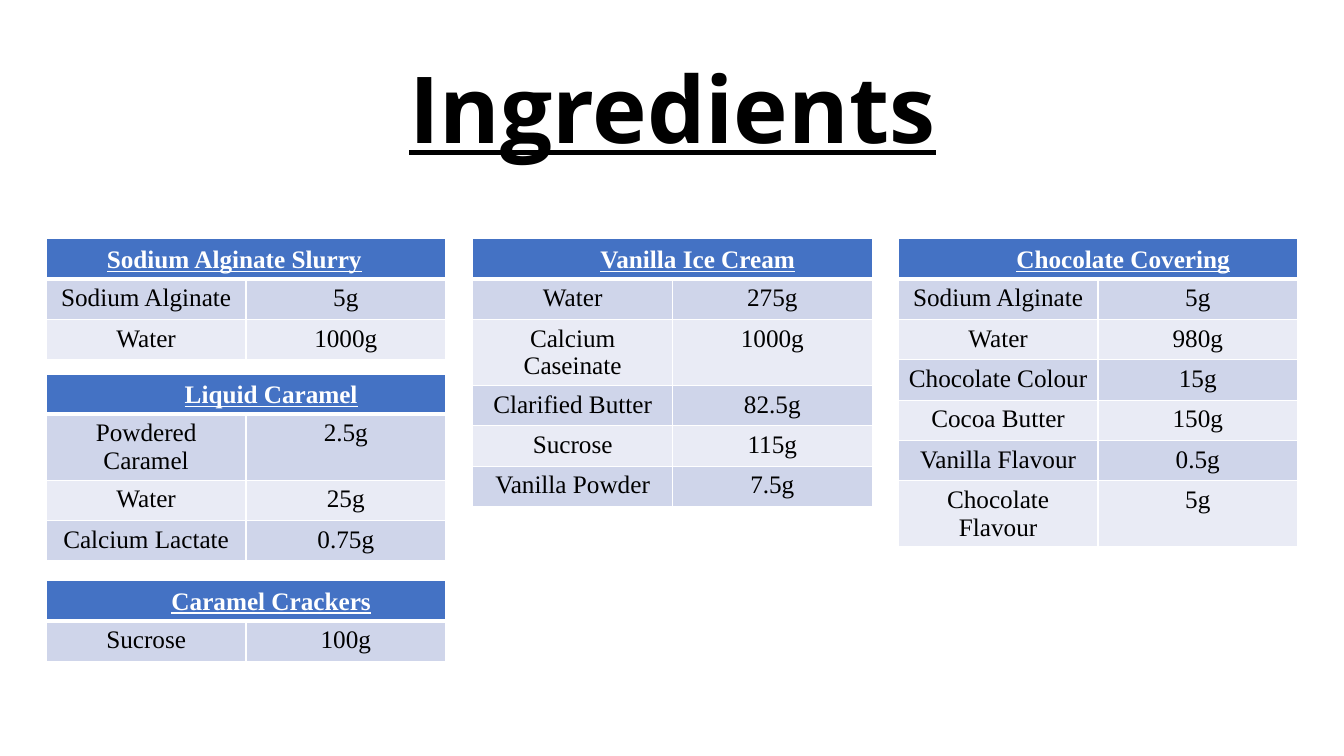
from lxml.etree import SubElement
from pptx import Presentation
from pptx.dml.color import RGBColor
from pptx.enum.text import MSO_ANCHOR, PP_ALIGN
from pptx.oxml.ns import qn
from pptx.util import Inches, Pt

COLUMN_LEFTS = [0.46, 4.69, 8.91]
TABLE_TOP = 2.37
TABLE_WIDTH = 3.96
ROW_HEIGHT = 0.4
HEADER_FILL = "4472C4"
BAND_FILLS = ["CFD5EA", "E9EBF5"]
WHITE = "FFFFFF"
BLACK = "000000"

RECIPES = [
    (0, TABLE_TOP, PP_ALIGN.LEFT, "Sodium Alginate Slurry",
     [("Sodium Alginate", "5g"), ("Water", "1000g")]),
    (0, 3.71, PP_ALIGN.CENTER, "Liquid Caramel",
     [("Powdered Caramel", "2.5g"), ("Water", "25g"), ("Calcium Lactate", "0.75g")]),
    (0, 5.76, PP_ALIGN.CENTER, "Caramel Crackers",
     [("Sucrose", "100g")]),
    (1, TABLE_TOP, PP_ALIGN.CENTER, "Vanilla Ice Cream",
     [("Water", "275g"), ("Calcium Caseinate", "1000g"), ("Clarified Butter", "82.5g"),
      ("Sucrose", "115g"), ("Vanilla Powder", "7.5g")]),
    (2, TABLE_TOP, PP_ALIGN.CENTER, "Chocolate Covering",
     [("Sodium Alginate", "5g"), ("Water", "980g"), ("Chocolate Colour", "15g"),
      ("Cocoa Butter", "150g"), ("Vanilla Flavour", "0.5g"), ("Chocolate Flavour", "5g")]),
]


def color(value):
    return RGBColor.from_string(value)


def format_paragraph(paragraph, font_name, size, font_color, heading, alignment):
    paragraph.alignment = alignment
    for run in paragraph.runs:
        font = run.font
        font.name = font_name
        font.size = Pt(size)
        font.color.rgb = color(font_color)
        font.bold = heading
        font.underline = heading


def add_borders(cell, top, bottom):
    properties = cell._tc.get_or_add_tcPr()
    for side, width in (("L", 1), ("R", 1), ("T", top), ("B", bottom)):
        line = SubElement(properties, qn(f"a:ln{side}"), w=str(Pt(width)))
        fill = SubElement(line, qn("a:solidFill"))
        SubElement(fill, qn("a:srgbClr"), val=WHITE)


def fill_cell(cell, text, fill, font_color, heading, alignment, top=1, bottom=1):
    add_borders(cell, top, bottom)
    cell.fill.solid()
    cell.fill.fore_color.rgb = color(fill)
    cell.text_frame.text = text
    paragraph = cell.text_frame.paragraphs[0]
    format_paragraph(paragraph, "Times New Roman", 18, font_color, heading, alignment)
    return paragraph


def add_recipe(slide, column, top, alignment, name, ingredients):
    row_count = len(ingredients) + 1
    table = slide.shapes.add_table(
        row_count, 2, Inches(COLUMN_LEFTS[column]), Inches(top),
        Inches(TABLE_WIDTH), Inches(ROW_HEIGHT * row_count)).table
    header = table.cell(0, 0)
    header.merge(table.cell(0, 1))
    paragraph = fill_cell(header, name, HEADER_FILL, WHITE, True, alignment, bottom=3)
    paragraph.line_spacing = 1.07
    paragraph.space_after = Pt(8)
    properties = paragraph._p.get_or_add_pPr()
    properties.set("marL", str(Inches(0.5)))
    properties.set("indent", "0")
    for row, ingredient in enumerate(ingredients, start=1):
        for index, text in enumerate(ingredient):
            fill_cell(table.cell(row, index), text, BAND_FILLS[(row - 1) % 2], BLACK,
                      False, PP_ALIGN.CENTER, top=3 if row == 1 else 1)


def add_title(slide, text):
    title = slide.shapes.title
    title.left, title.top = Inches(0.92), Inches(0.4)
    title.width, title.height = Inches(11.5), Inches(1.45)
    title.text_frame.text = text
    title.text_frame.vertical_anchor = MSO_ANCHOR.MIDDLE
    paragraph = title.text_frame.paragraphs[0]
    paragraph.line_spacing = 0.9
    format_paragraph(paragraph, "Open Sans", 66, BLACK, True, PP_ALIGN.CENTER)


def main():
    presentation = Presentation()
    presentation.slide_width = Inches(13.33)
    presentation.slide_height = Inches(7.5)
    slide = presentation.slides.add_slide(presentation.slide_layouts[5])
    add_title(slide, "Ingredients")
    for recipe in RECIPES:
        add_recipe(slide, *recipe)
    presentation.save("out.pptx")


if __name__ == "__main__":
    main()
